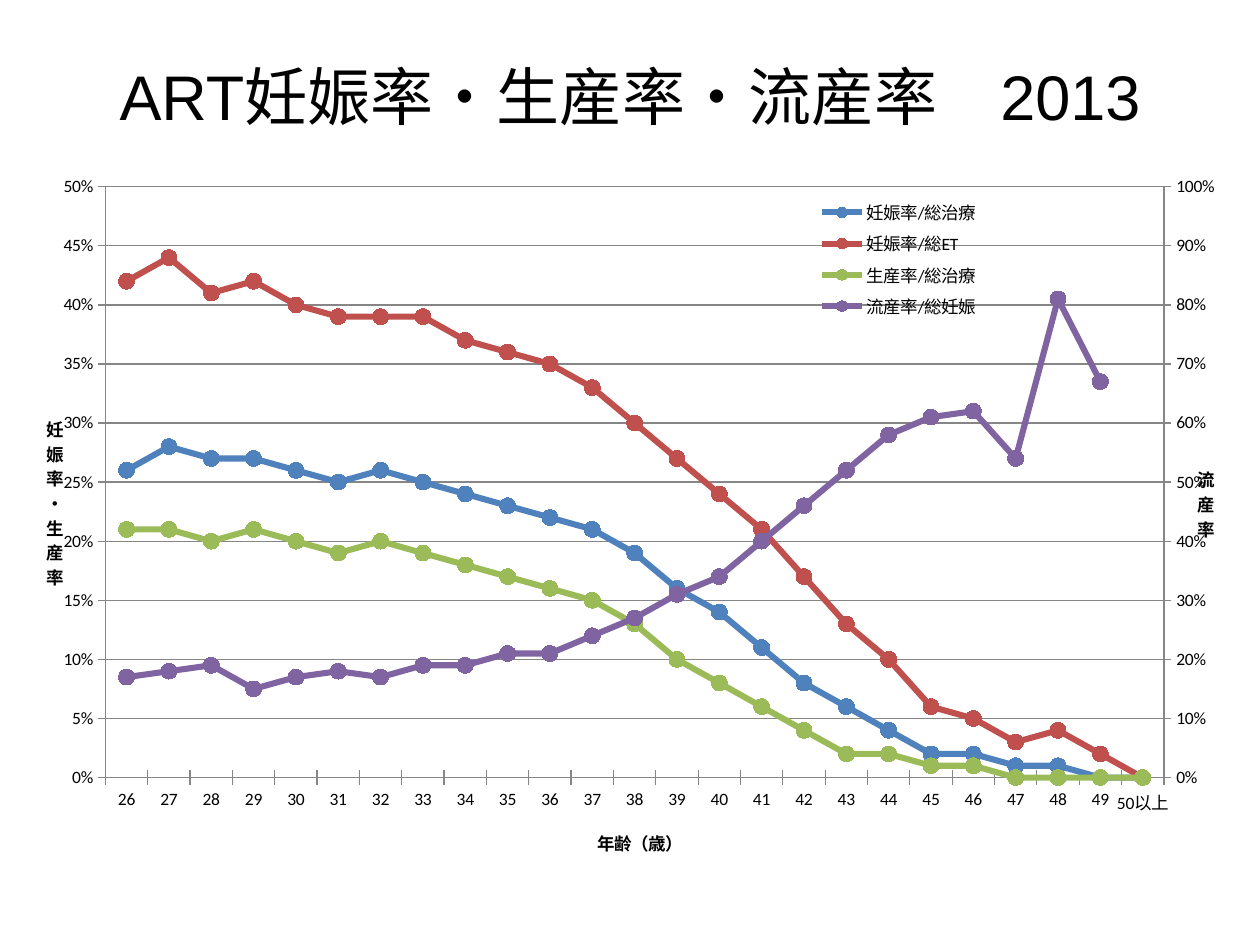
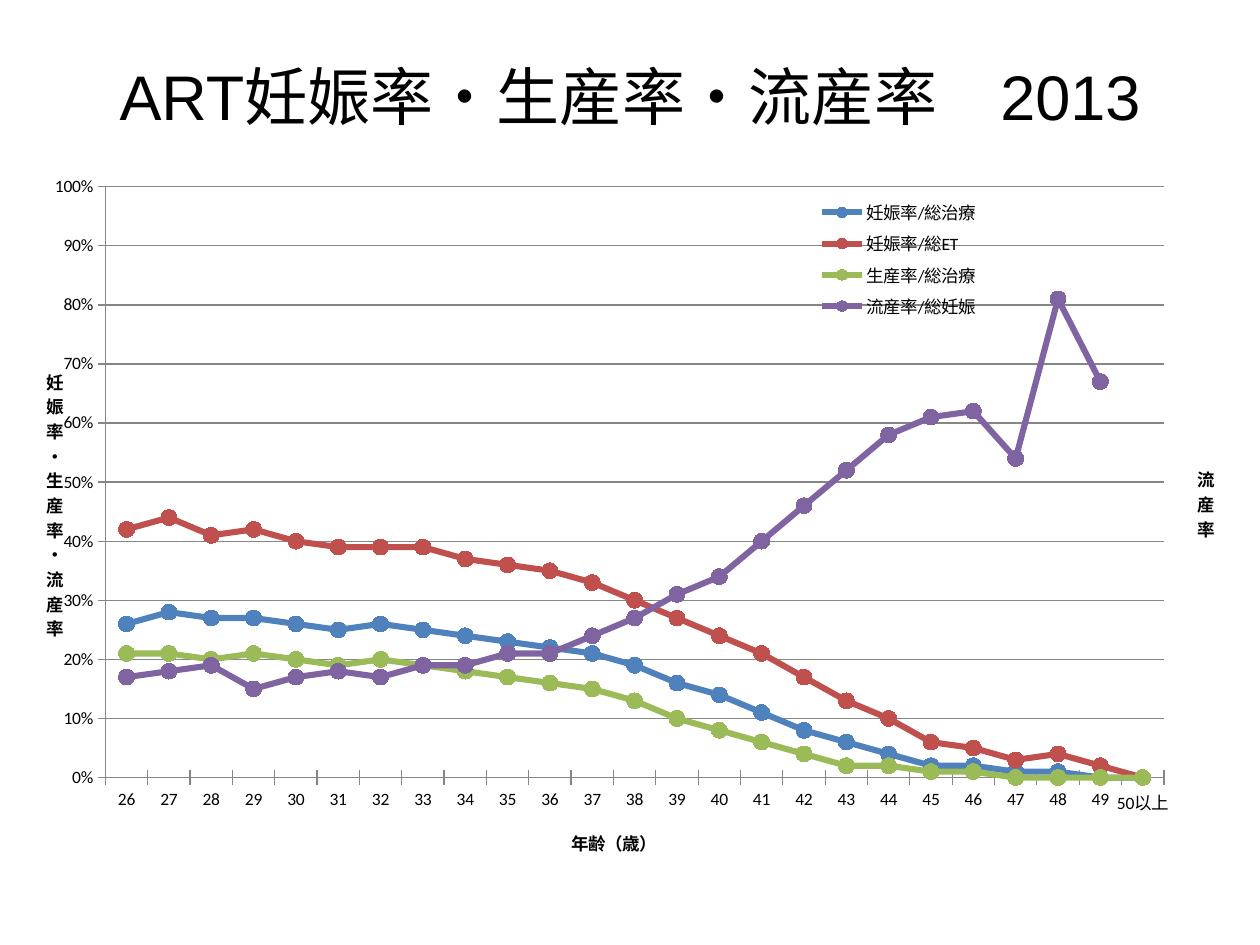
from copy import deepcopy
from lxml import etree
from pptx import Presentation
from pptx.chart.axis import ValueAxis, CategoryAxis
from pptx.chart.data import CategoryChartData
from pptx.dml.color import RGBColor
from pptx.enum.chart import XL_CHART_TYPE, XL_LEGEND_POSITION, XL_MARKER_STYLE, XL_TICK_MARK
from pptx.enum.text import MSO_ANCHOR, PP_ALIGN
from pptx.oxml.ns import qn
from pptx.util import Pt

LINES = XL_CHART_TYPE.LINE_MARKERS
RIGHT = XL_LEGEND_POSITION.RIGHT
CIRCLE = XL_MARKER_STYLE.CIRCLE
CROSS = XL_TICK_MARK.CROSS
CENTER = PP_ALIGN.CENTER
MIDDLE = MSO_ANCHOR.MIDDLE

PX = 914400 / 126
WIDE, HIGH = 1176, 697  # chart size in px
BLACK, GREY = "000000", "868686"
rgb = RGBColor.from_string

AGES = [str(age) for age in range(26, 50)] + ["50以上"]
RATES = [
    ("妊娠率/総治療", "4F81BD",
     [.26, .28, .27, .27, .26, .25, .26, .25, .24, .23, .22, .21, .19,
      .16, .14, .11, .08, .06, .04, .02, .02, .01, .01, 0, 0]),
    ("妊娠率/総ET", "C0504D",
     [.42, .44, .41, .42, .4, .39, .39, .39, .37, .36, .35, .33, .3,
      .27, .24, .21, .17, .13, .1, .06, .05, .03, .04, .02, 0]),
    ("生産率/総治療", "9BBB59",
     [.21, .21, .2, .21, .2, .19, .2, .19, .18, .17, .16, .15, .13,
      .1, .08, .06, .04, .02, .02, .01, .01, 0, 0, 0, 0]),
    ("流産率/総妊娠", "8064A2",
     [.17, .18, .19, .15, .17, .18, .17, .19, .19, .21, .21, .24, .27,
      .31, .34, .4, .46, .52, .58, .61, .62, .54, .81, .67, None]),
]
# Left axis title, its top, left maximum, left step, age title x, right axis shown
SLIDES = [
    ("妊娠率・生産率", 251, .5, .05, 553, True),
    ("妊娠率・生産率・流産率", 203, 1, .1, 527, False),
]


def place(node, slot, x, y, w=None, h=None, inner=False):
    """Give a chart part a fixed place, in px from the chart's corner."""
    for old in node.findall(qn("c:layout")):
        node.remove(old)
    layout = etree.Element(qn("c:layout"))
    manual = etree.SubElement(layout, qn("c:manualLayout"))
    items = [("layoutTarget", "inner")] if inner else []
    items += [("xMode", "edge"), ("yMode", "edge"),
              ("x", round(x / WIDE, 3)), ("y", round(y / HIGH, 3))]
    if w:
        items += [("w", round(w / WIDE, 3)), ("h", round(h / HIGH, 3))]
    for tag, val in items:
        etree.SubElement(manual, qn("c:" + tag)).set("val", str(val))
    node.insert(slot, layout)


def label(axis, text, x, y, stack):
    """Add a bold axis title, stacked letter by letter if asked."""
    frame = axis.axis_title.text_frame
    run = frame.paragraphs[0].add_run()
    run.text = text
    run.font.size, run.font.bold, run.font.name = Pt(10), True, "Calibri"
    run.font.color.rgb = rgb(BLACK)
    body = frame._txBody.find(qn("a:bodyPr"))
    body.set("rot", "0")
    body.set("vert", "wordArtVertRtl" if stack else "horz")
    place(axis.axis_title._element, 1, x, y)


prs = Presentation()
prs.slide_width, prs.slide_height = round(1260 * PX), round(945 * PX)

for name, top, most, step, mid, shown in SLIDES:
    slide = prs.slides.add_slide(prs.slide_layouts[5])

    # Title
    title = slide.shapes.title
    title.left, title.top, title.width, title.height = [
        round(v * PX) for v in (63, 38, 1134, 115)]
    frame = title.text_frame
    frame.vertical_anchor = MIDDLE
    para = frame.paragraphs[0]
    para.alignment = CENTER
    run = para.add_run()
    run.text = "ART妊娠率・生産率・流産率\u30002013"
    run.font.size, run.font.name = Pt(36), "Arial"
    run.font.color.rgb = rgb(BLACK)
    etree.SubElement(run.font._element, qn("a:ea")).set("typeface", "Arial")

    # Chart with its four lines
    data = CategoryChartData(number_format="0%")
    data.categories = AGES
    for key, _, vals in RATES:
        data.add_series(key, vals)
    box = [round(v * PX) for v in (42, 164, WIDE, HIGH)]
    chart = slide.shapes.add_chart(LINES, *box, data).chart
    chart.has_title = False
    chart.font.size, chart.font.name = Pt(10), "Calibri"
    chart.font.color.rgb = rgb(BLACK)
    plot = chart.plots[0]
    plot.vary_by_categories = False
    for line, (_, hue, _) in zip(plot.series, RATES):
        line.smooth = False
        line.format.line.width = Pt(3.5)
        line.format.line.color.rgb = rgb(hue)
        mark = line.marker
        mark.style, mark.size = CIRCLE, 9
        mark.format.fill.solid()
        mark.format.fill.fore_color.rgb = rgb(hue)
        mark.format.line.color.rgb = rgb(hue)

    # Axes
    ages, left = chart.category_axis, chart.value_axis
    for axis in (ages, left):
        axis.major_tick_mark = CROSS
        axis.format.line.color.rgb = rgb(GREY)
    left.minimum_scale, left.maximum_scale, left.major_unit = 0, most, step
    left.tick_labels.number_format = "0%"
    left.tick_labels.number_format_is_linked = False
    left.has_major_gridlines = True
    left.major_gridlines.format.line.color.rgb = rgb(GREY)

    # Second axis pair, carrying only the last line
    base = plot._element
    area = base.getparent()
    twin = deepcopy(base)
    base.remove(base.findall(qn("c:ser"))[-1])
    for ser in twin.findall(qn("c:ser"))[:-1]:
        twin.remove(ser)
    base.addnext(twin)
    pair = [deepcopy(left._element), deepcopy(ages._element)]
    left._element.addnext(pair[0])
    pair[0].addnext(pair[1])
    codes = ["5002", "5001"]
    for node, own, other in zip(pair, codes, codes[::-1]):
        node.find(qn("c:axId")).set("val", own)
        node.find(qn("c:crossAx")).set("val", other)
    for node, code in zip(twin.findall(qn("c:axId")), codes[::-1]):
        node.set("val", code)
    pair[0].find(qn("c:axPos")).set("val", "r")
    pair[0].find(qn("c:crosses")).set("val", "max")
    right = ValueAxis(pair[0])
    right.has_major_gridlines = False
    right.maximum_scale, right.major_unit = 1, .1
    right.visible = shown
    CategoryAxis(pair[1]).visible = False

    # Axis titles
    label(left, name, 1, top, True)
    label(right, "流産率", 1154, 302, True)
    label(ages, "年齢（歳）", mid, 670, False)

    # Legend and plot area
    chart.has_legend = True
    chart.legend.position = RIGHT
    chart.legend.include_in_layout = False
    place(chart.legend._element, 1, 770, 30, 175, 133)
    place(area, 0, 63, 23, 1059, 598, inner=True)

prs.save("out.pptx")
